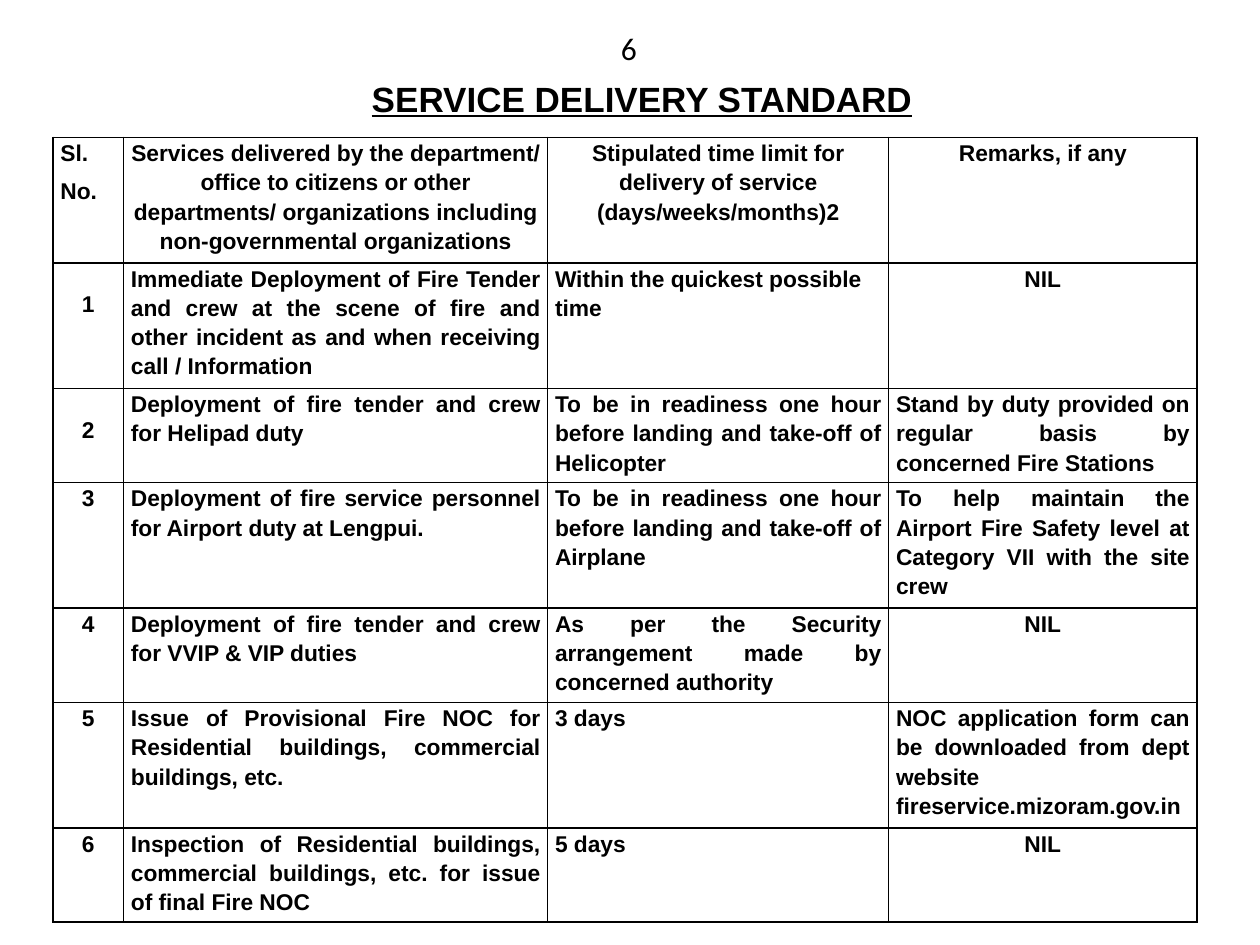
import pptx
import pptx.dml.color
import pptx.enum.text
import pptx.oxml
import pptx.oxml.ns
import pptx.util

Inches = pptx.util.Inches
Pt = pptx.util.Pt
ALIGN = pptx.enum.text.PP_ALIGN
ANCHOR = pptx.enum.text.MSO_ANCHOR
COLORS = {"ink": "000000"}
TITLE_FORMAT = {"name": "Arial", "size": Pt(20), "bold": True, "underline": True}
NUMBER_FORMAT = {"name": "Calibri", "size": Pt(18)}
CELL_FORMAT = {"name": "Arial", "size": Pt(13), "bold": True}
CELL_MARGINS = {"margin_left": Inches(0.06), "margin_right": Inches(0.06),
                "margin_top": 0, "margin_bottom": 0}
COLUMN_WIDTHS = [0.56, 3.37, 2.71, 2.45]
ROW_HEIGHTS = [1, 1, 0.75, 1, 0.75, 1, 0.75]
LOWERED_NUMBERS = ("1", "2")
LEFT_ALIGNED = ("Sl.\nNo.", "Within the quickest possible time")
SERVICES = [
    ("Sl.\nNo.",
     "Services delivered by the department/ office to citizens or other "
     "departments/ organizations including non-governmental organizations",
     "Stipulated time limit for delivery of service (days/weeks/months)2",
     "Remarks, if any"),
    ("1",
     "Immediate Deployment of Fire Tender and crew at the scene of fire and "
     "other incident as and when receiving call / Information",
     "Within the quickest possible time", "NIL"),
    ("2", "Deployment of fire tender and crew for Helipad duty",
     "To be in readiness one hour before landing and take-off of Helicopter",
     "Stand by duty provided on regular basis by concerned Fire Stations"),
    ("3", "Deployment of fire service personnel for Airport duty at Lengpui.",
     "To be in readiness one hour before landing and take-off of Airplane",
     "To help maintain the Airport Fire Safety level at Category VII with the site crew"),
    ("4", "Deployment of fire tender and crew for VVIP & VIP duties",
     "As per the Security arrangement made by concerned authority", "NIL"),
    ("5",
     "Issue of Provisional Fire NOC for Residential buildings, commercial buildings, etc.",
     "3 days",
     "NOC application form can be downloaded from dept website fireservice.mizoram.gov.in"),
    ("6",
     "Inspection of Residential buildings, commercial buildings, etc. for issue "
     "of final Fire NOC",
     "5 days", "NIL"),
]


def apply_format(target, values):
    """Set each named attribute of the target."""
    for name, value in values.items():
        setattr(target, name, value)


def format_text(paragraph, values):
    """Apply font values and the ink colour to the runs of a paragraph."""
    for run in paragraph.runs:
        apply_format(run.font, values)
        run.font.color.rgb = pptx.dml.color.RGBColor.from_string(COLORS["ink"])


def add_borders(cell):
    """Draw a one-point line on all four sides of a cell."""
    properties = cell._tc.get_or_add_tcPr()
    for position, side in enumerate(("lnL", "lnR", "lnT", "lnB")):
        properties.insert(position, pptx.oxml.parse_xml(
            f'<a:{side} {pptx.oxml.ns.nsdecls("a")} w="{Pt(1)}"><a:solidFill>'
            f'<a:srgbClr val="{COLORS["ink"]}"/></a:solidFill></a:{side}>'))


def choose_alignment(row, column, text):
    """Return the alignment that suits the cell's place and content."""
    if text in LEFT_ALIGNED:
        return ALIGN.LEFT
    if row == 0 or column == 0 or text == "NIL":
        return ALIGN.CENTER
    return ALIGN.JUSTIFY


def fill_cell(cell, text, alignment):
    """Write and format the text of one cell."""
    cell.fill.background()
    apply_format(cell, CELL_MARGINS)
    if text in LOWERED_NUMBERS:
        cell.margin_top = Inches(0.2)
    cell.text = text
    for index, paragraph in enumerate(cell.text_frame.paragraphs):
        apply_format(paragraph, {"alignment": alignment,
                                 "line_spacing": 1.5 if index else 1.15})
        format_text(paragraph, CELL_FORMAT)
    add_borders(cell)


def place_title(slide, left, top, width, height):
    """Place the underlined heading in the title placeholder."""
    title = slide.shapes.title
    apply_format(title, {"left": left, "top": top, "width": width, "height": height})
    title.text_frame.text = "SERVICE DELIVERY STANDARD"
    apply_format(title.text_frame, {"word_wrap": False, "vertical_anchor": ANCHOR.MIDDLE,
                                    "auto_size": pptx.enum.text.MSO_AUTO_SIZE.NONE})
    paragraph = title.text_frame.paragraphs[0]
    paragraph.alignment = ALIGN.CENTER
    format_text(paragraph, TITLE_FORMAT)


def place_page_number(slide, left, top, width, height):
    """Place the page number above the heading."""
    frame = slide.shapes.add_textbox(left, top, width, height).text_frame
    frame.word_wrap = True
    frame.text = "6"
    format_text(frame.paragraphs[0], NUMBER_FORMAT)


def place_services_table(slide, left, top, width, height):
    """Place the table of services, time limits and remarks."""
    table = slide.shapes.add_table(
        len(SERVICES), len(COLUMN_WIDTHS), left, top, width, height).table
    apply_format(table, {"first_row": False, "horz_banding": False})
    for column, share in zip(table.columns, COLUMN_WIDTHS):
        column.width = int(width * share / sum(COLUMN_WIDTHS))
    for row, share in zip(table.rows, ROW_HEIGHTS):
        row.height = int(height * share / sum(ROW_HEIGHTS))
    for row, texts in enumerate(SERVICES):
        for column, text in enumerate(texts):
            fill_cell(table.cell(row, column), text, choose_alignment(row, column, text))


def main():
    """Build and save the slide."""
    presentation = pptx.Presentation()
    apply_format(presentation, {"slide_width": Inches(10), "slide_height": Inches(7.5)})
    slide = presentation.slides.add_slide(presentation.slide_layouts[5])
    place_title(slide, Inches(2.83), Inches(0.56), Inches(4.53), Inches(0.44))
    place_services_table(slide, Inches(0.42), Inches(1.09), Inches(9.08), Inches(6.23))
    place_page_number(slide, Inches(4.83), Inches(0.18), Inches(0.42), Inches(0.4))
    presentation.save("out.pptx")


if __name__ == "__main__":
    main()
